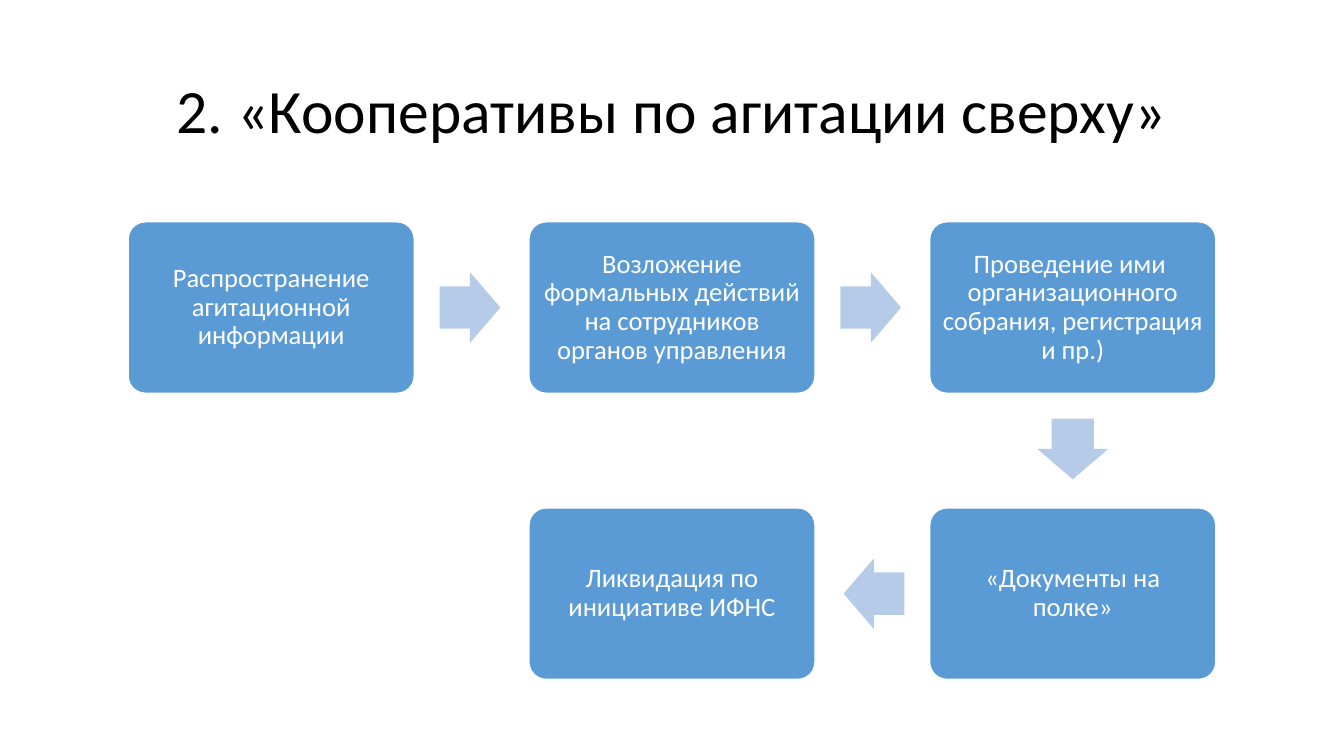
from pptx import Presentation
from pptx.dml.color import RGBColor
from pptx.enum.shapes import MSO_SHAPE
from pptx.enum.text import MSO_ANCHOR, PP_ALIGN
from pptx.util import Cm, Pt

BOX = MSO_SHAPE.ROUNDED_RECTANGLE
ARROW = MSO_SHAPE.RIGHT_ARROW
MIDDLE = MSO_ANCHOR.MIDDLE
CENTER = PP_ALIGN.CENTER

COLORS = {"box": "5B9BD5", "arrow": "B5CBE7", "white": "FFFFFF", "black": "000000"}

# Lengths in centimetres
LEFT, TOP = 3.23, 5.59
WIDTH, HEIGHT = 7.21, 4.32
STEP_X, STEP_Y = 10.1, 7.21
LONG, WIDE, GAP = 1.53, 1.78, 0.64

# Text, column, row
STEPS = [
    ("Распространение агитационной информации", 0, 0),
    ("Возложение формальных действий на сотрудников органов управления", 1, 0),
    ("Проведение ими  организационного собрания, регистрация и пр.)", 2, 0),
    ("«Документы на полке»", 2, 1),
    ("Ликвидация по инициативе ИФНС", 1, 1),
]
TURNS = {(1, 0): 0, (0, 1): 90, (-1, 0): 180}


def color(name):
    return RGBColor.from_string(COLORS[name])


def write(frame, text, size, ink):
    """Put one centred paragraph into a text frame."""
    frame.text = text
    frame.word_wrap = True
    frame.vertical_anchor = MIDDLE
    para = frame.paragraphs[0]
    para.alignment = CENTER
    para.line_spacing = 0.9
    font = para.runs[0].font
    font.name = "Calibri"
    font.size = Pt(size)
    font.color.rgb = color(ink)


prs = Presentation()
prs.slide_width, prs.slide_height = Cm(33.87), Cm(19.05)
slide = prs.slides.add_slide(prs.slide_layouts[5])
shapes = slide.shapes

title = shapes.title
title.left, title.top, title.width, title.height = Cm(2.33), Cm(1.01), Cm(29.21), Cm(3.68)
write(title.text_frame, "2. «Кооперативы по агитации сверху»", 44, "black")

# Process steps
for text, col, row in STEPS:
    box = shapes.add_shape(BOX, Cm(LEFT + col * STEP_X), Cm(TOP + row * STEP_Y),
                           Cm(WIDTH), Cm(HEIGHT))
    box.adjustments[0] = 0.1
    box.shadow.inherit = False
    box.fill.solid()
    box.fill.fore_color.rgb = color("box")
    box.line.color.rgb = color("white")
    box.line.width = Pt(1)
    frame = box.text_frame
    frame.margin_left = frame.margin_right = Cm(0.2)
    frame.margin_top = frame.margin_bottom = Cm(0.2)
    write(frame, text, 19, "white")

# Each arrow starts one gap beyond the box it leaves
for (_, col, row), (_, col2, row2) in zip(STEPS, STEPS[1:]):
    dx, dy = col2 - col, row2 - row
    mid_x = LEFT + col * STEP_X + WIDTH / 2 + dx * (WIDTH / 2 + GAP + LONG / 2)
    mid_y = TOP + row * STEP_Y + HEIGHT / 2 + dy * (HEIGHT / 2 + GAP + LONG / 2)
    arrow = shapes.add_shape(ARROW, Cm(mid_x - LONG / 2), Cm(mid_y - WIDE / 2),
                             Cm(LONG), Cm(WIDE))
    arrow.adjustments[0] = 0.6
    arrow.adjustments[1] = 0.5
    arrow.rotation = TURNS[dx, dy]
    arrow.shadow.inherit = False
    arrow.fill.solid()
    arrow.fill.fore_color.rgb = color("arrow")
    arrow.line.fill.background()

prs.save("out.pptx")
